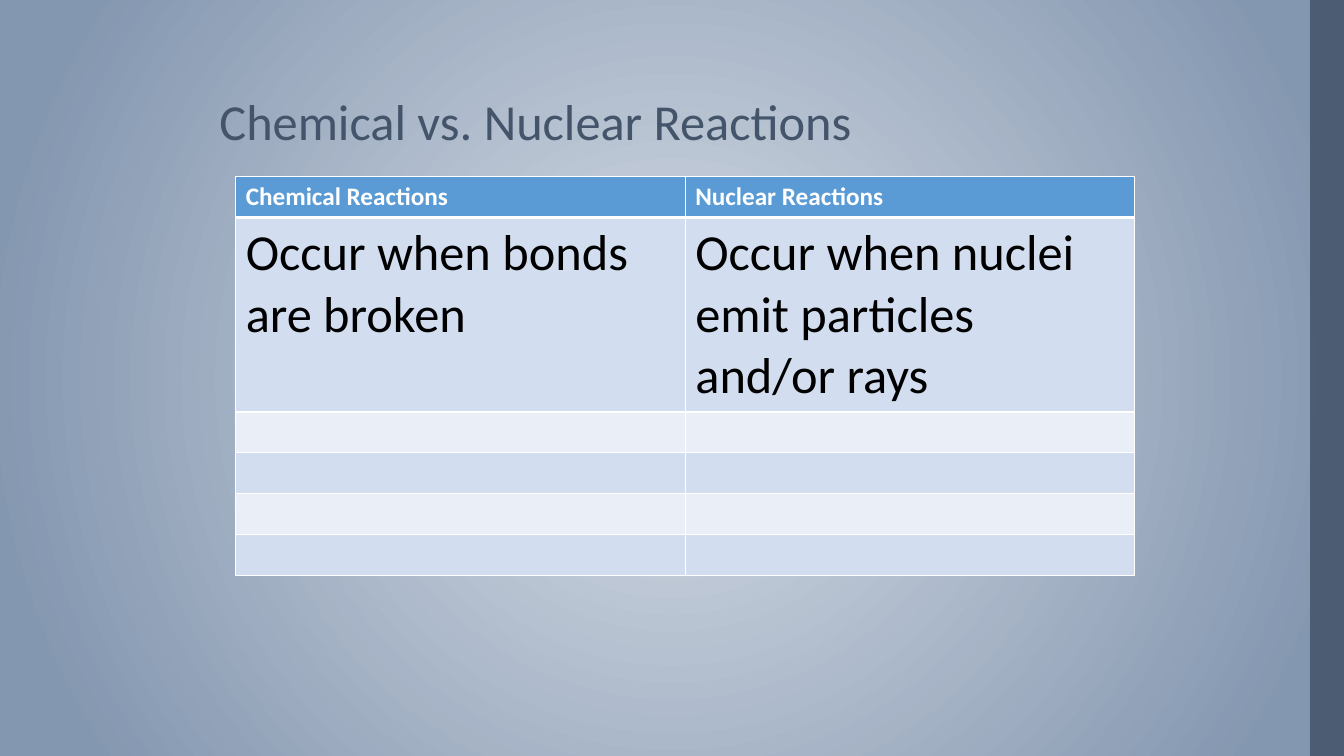
from lxml import etree
from pptx import Presentation
from pptx.dml.color import RGBColor
from pptx.enum.shapes import MSO_SHAPE
from pptx.enum.text import MSO_ANCHOR
from pptx.oxml.ns import qn
from pptx.util import Cm, Pt

RECTANGLE = MSO_SHAPE.RECTANGLE
BOTTOM = MSO_ANCHOR.BOTTOM

FONT = "Calibri"
SLATE = RGBColor(0x44, 0x54, 0x6A)
GLOW_CENTER = RGBColor(0xD6, 0xDC, 0xE5)
GLOW_EDGE = RGBColor(0x84, 0x97, 0xB0)
HEADER_BLUE = RGBColor(0x5B, 0x9B, 0xD5)
BAND_DARK = RGBColor(0xD2, 0xDE, 0xEF)
BAND_LIGHT = RGBColor(0xEA, 0xEF, 0xF7)
WHITE = RGBColor(0xFF, 0xFF, 0xFF)
BLACK = RGBColor(0x00, 0x00, 0x00)

SLIDE_WIDTH, SLIDE_HEIGHT = Cm(33.87), Cm(19.05)
ROW_HEIGHT, STATEMENT_HEIGHT = Cm(1.03), Cm(4.9)
EMPTY_ROWS = 4
COMPARISON = [
    ("Chemical Reactions", "Nuclear Reactions"),
    ("Occur when bonds are broken",
     "Occur when nuclei emit particles and/or rays"),
] + [("", "")] * EMPTY_ROWS


def add_run(paragraph, text, size, color, bold=False):
    run = paragraph.add_run()
    run.text = text
    run.font.name = FONT
    run.font.size = Pt(size)
    run.font.bold = bold
    run.font.color.rgb = color


def paint_background(slide):
    fill = slide.background.fill
    fill.gradient()
    stops = zip(fill.gradient_stops, (GLOW_CENTER, GLOW_EDGE), (0, 0.9))
    for stop, color, position in stops:
        stop.color.rgb = color
        stop.position = position
    # Turn the linear gradient into a circle around the slide centre
    gradient = next(slide.element.iter(qn("a:gradFill")))
    gradient.remove(gradient.find(qn("a:lin")))
    circle = etree.SubElement(gradient, qn("a:path"), path="circle")
    etree.SubElement(circle, qn("a:fillToRect"),
                     l="50000", t="50000", r="50000", b="50000")


def add_side_band(slide, left, top, width, height):
    band = slide.shapes.add_shape(RECTANGLE, left, top, width, height)
    band.shadow.inherit = False
    band.line.fill.background()
    band.fill.solid()
    band.fill.fore_color.rgb = SLATE
    tint = next(band.fill._xPr.iter(qn("a:srgbClr")))
    etree.SubElement(tint, qn("a:alpha"), val="87000")


def add_title(slide, left, top, width, height):
    frame = slide.shapes.add_textbox(left, top, width, height).text_frame
    frame.word_wrap = True
    frame.vertical_anchor = BOTTOM
    heading = frame.paragraphs[0]
    heading.line_spacing = 0.9
    add_run(heading, "Chemical vs. Nuclear Reactions", 36, SLATE)


def set_borders(cell, bottom_width):
    properties = cell._tc.get_or_add_tcPr()
    widths = {"L": 1, "R": 1, "T": 1, "B": bottom_width}
    # Borders come before the fill in the cell properties
    for index, (side, width) in enumerate(widths.items()):
        border = etree.Element(qn(f"a:ln{side}"), w=str(Pt(width)))
        solid = etree.SubElement(border, qn("a:solidFill"))
        etree.SubElement(solid, qn("a:srgbClr"), val=str(WHITE))
        properties.insert(index, border)


def add_comparison(slide, left, top, width):
    row_count, column_count = len(COMPARISON), len(COMPARISON[0])
    height = ROW_HEIGHT * (row_count - 1) + STATEMENT_HEIGHT
    table = slide.shapes.add_table(
        row_count, column_count, left, top, width, height).table
    for column in table.columns:
        column.width = width // column_count
    for r, texts in enumerate(COMPARISON):
        is_header = r == 0
        table.rows[r].height = STATEMENT_HEIGHT if r == 1 else ROW_HEIGHT
        band = BAND_DARK if r % 2 else BAND_LIGHT
        for c, text in enumerate(texts):
            cell = table.cell(r, c)
            cell.fill.solid()
            cell.fill.fore_color.rgb = HEADER_BLUE if is_header else band
            set_borders(cell, 3 if is_header else 1)
            paragraph = cell.text_frame.paragraphs[0]
            if is_header:
                add_run(paragraph, text, 18, WHITE, bold=True)
            elif text:
                add_run(paragraph, text, 36, BLACK)
            else:
                paragraph.font.size = Pt(18)


def main():
    deck = Presentation()
    deck.slide_width, deck.slide_height = SLIDE_WIDTH, SLIDE_HEIGHT
    slide = deck.slides.add_slide(deck.slide_layouts[6])
    paint_background(slide)
    band_width = Cm(0.85)
    add_side_band(slide, SLIDE_WIDTH - band_width, 0, band_width, SLIDE_HEIGHT)
    add_title(slide, Cm(5.28), Cm(0.48), Cm(26.31), Cm(3.45))
    add_comparison(slide, Cm(5.94), Cm(4.45), Cm(22.66))
    deck.save("out.pptx")


if __name__ == "__main__":
    main()
